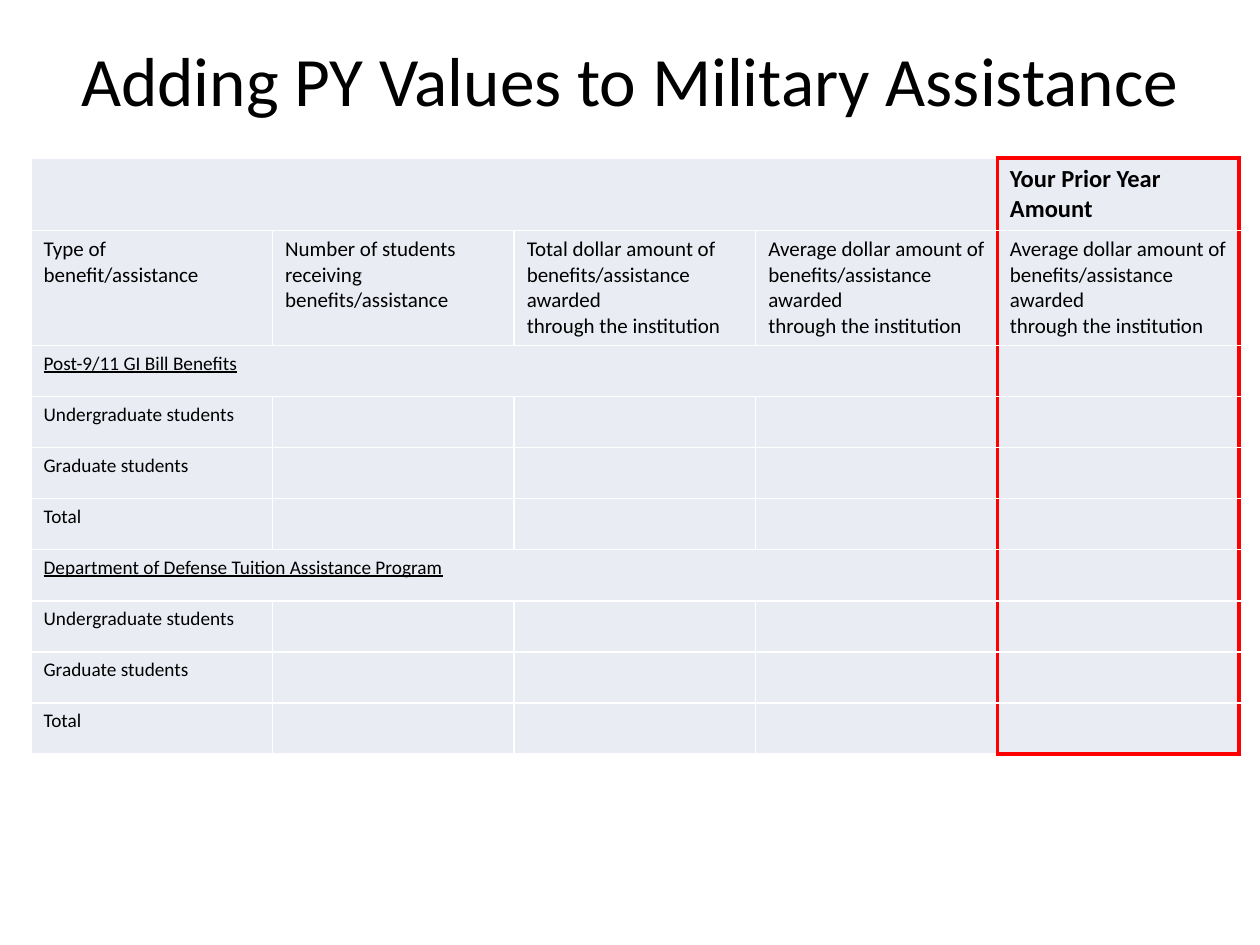
from dataclasses import dataclass

from lxml.etree import SubElement
from pptx import Presentation
from pptx.dml.color import RGBColor as RGB
from pptx.enum.text import MSO_ANCHOR as Anchor, MSO_AUTO_SIZE as AutoSize, PP_ALIGN as Align
from pptx.oxml.ns import qn
from pptx.util import Emu, Pt


@dataclass(frozen=True)
class Theme:
    font: str = "Calibri"
    text: str = "000000"
    band: str = "D0D8E8"
    pale: str = "E9EDF4"
    section: str = "BFBFBF"
    grid: tuple = ("FFFFFF", 1)
    accent: tuple = ("FF0000", 2.25)
    title_size: float = 39.6
    prior_size: int = 14
    header_size: int = 12
    body_size: int = 11


THEME = Theme()
EMU_PER_PX = 914400 / 126
COLS = 5
PRIOR = COLS - 1

AVERAGE = "Average dollar amount of\nbenefits/assistance awarded\nthrough the institution"
HEADERS = [
    "Type of benefit/assistance",
    "Number of students\nreceiving benefits/assistance",
    "Total dollar amount of\nbenefits/assistance awarded\nthrough the institution",
    AVERAGE,
    AVERAGE,
]
PROGRAMS = ["Post-9/11 GI Bill Benefits", "Department of Defense Tuition Assistance Program"]
GROUPS = [
    ("Undergraduate students", THEME.pale),
    ("Graduate students", THEME.band),
    ("Total", THEME.pale),
]


def px(n):
    return Emu(round(n * EMU_PER_PX))


def style_text(tf, size, bold=False, underline=False):
    for p in tf.paragraphs:
        for r in p.runs:
            r.font.name = THEME.font
            r.font.size = Pt(size)
            r.font.bold = bold
            r.font.underline = underline
            r.font.color.rgb = RGB.from_string(THEME.text)


def set_borders(cell, **sides):
    tc_pr = cell._tc.get_or_add_tcPr()
    for side in "LRTB":
        color, width = sides.get(side, THEME.grid)
        ln = SubElement(tc_pr, qn(f"a:ln{side}"), w=str(Pt(width)))
        fill = SubElement(ln, qn("a:solidFill"))
        SubElement(fill, qn("a:srgbClr"), val=color)


def outline_prior_column(table):
    last = len(table.rows) - 1
    for i in range(len(table.rows)):
        for j in range(COLS):
            cell = table.cell(i, j)
            sides = {}
            if j == PRIOR:
                sides = {"L": THEME.accent, "R": THEME.accent}
                if i == 0:
                    sides["T"] = THEME.accent
                if i == last:
                    sides["B"] = THEME.accent
            elif j == PRIOR - 1 or cell.is_merge_origin:
                sides = {"R": THEME.accent}
            set_borders(cell, **sides)


def fill_row(table, i, texts, color, size, merged=False, **style):
    if merged:
        table.cell(i, 0).merge(table.cell(i, PRIOR - 1))
    for j in range(COLS):
        cell = table.cell(i, j)
        cell.fill.solid()
        cell.fill.fore_color.rgb = RGB.from_string(color)
        if j < len(texts) and texts[j]:
            cell.text_frame.text = texts[j]
            style_text(cell.text_frame, size, **style)


def add_title(slide, x, y, w, h):
    s = slide.shapes.title
    s.left, s.top, s.width, s.height = px(x), px(y), px(w), px(h)
    tf = s.text_frame
    tf.text = "Adding PY Values to Military Assistance"
    tf.word_wrap = True
    tf.auto_size = AutoSize.NONE
    tf.vertical_anchor = Anchor.MIDDLE
    tf.paragraphs[0].alignment = Align.CENTER
    style_text(tf, THEME.title_size)


def add_benefits_table(slide, x, y, w, h):
    top_h, header_h = 72, 115
    count = 2 + len(PROGRAMS) * (1 + len(GROUPS))
    body_h = (h - top_h - header_h) / (count - 2)
    table = slide.shapes.add_table(count, COLS, px(x), px(y), px(w), px(h)).table
    table.first_row = table.horz_banding = False
    for col in table.columns:
        col.width = px(w / COLS)
    for i, row in enumerate(table.rows):
        row.height = px((top_h, header_h)[i] if i < 2 else body_h)

    prior = [""] * PRIOR + ["Your Prior Year Amount"]
    fill_row(table, 0, prior, THEME.band, THEME.prior_size, merged=True, bold=True)
    fill_row(table, 1, HEADERS, THEME.pale, THEME.header_size)
    i = 2
    for program in PROGRAMS:
        fill_row(table, i, [program], THEME.section, THEME.body_size, merged=True, underline=True)
        for k, (group, color) in enumerate(GROUPS, i + 1):
            fill_row(table, k, [group], color, THEME.body_size)
        i += 1 + len(GROUPS)
    for cell in table.iter_cells():
        tc_pr = cell._tc.get_or_add_tcPr()
        fill = tc_pr.find(qn("a:solidFill"))
        tc_pr.remove(fill)
        cell_fill = fill
        cell_fill.tail = None
    outline_prior_column(table)


def main():
    prs = Presentation()
    prs.slide_width, prs.slide_height = px(1260), px(945)
    slide = prs.slides.add_slide(prs.slide_layouts[5])
    add_title(slide, 63, 0, 1134, 157)
    add_benefits_table(slide, 31, 158, 1208, 595)
    prs.save("out.pptx")


if __name__ == "__main__":
    main()
